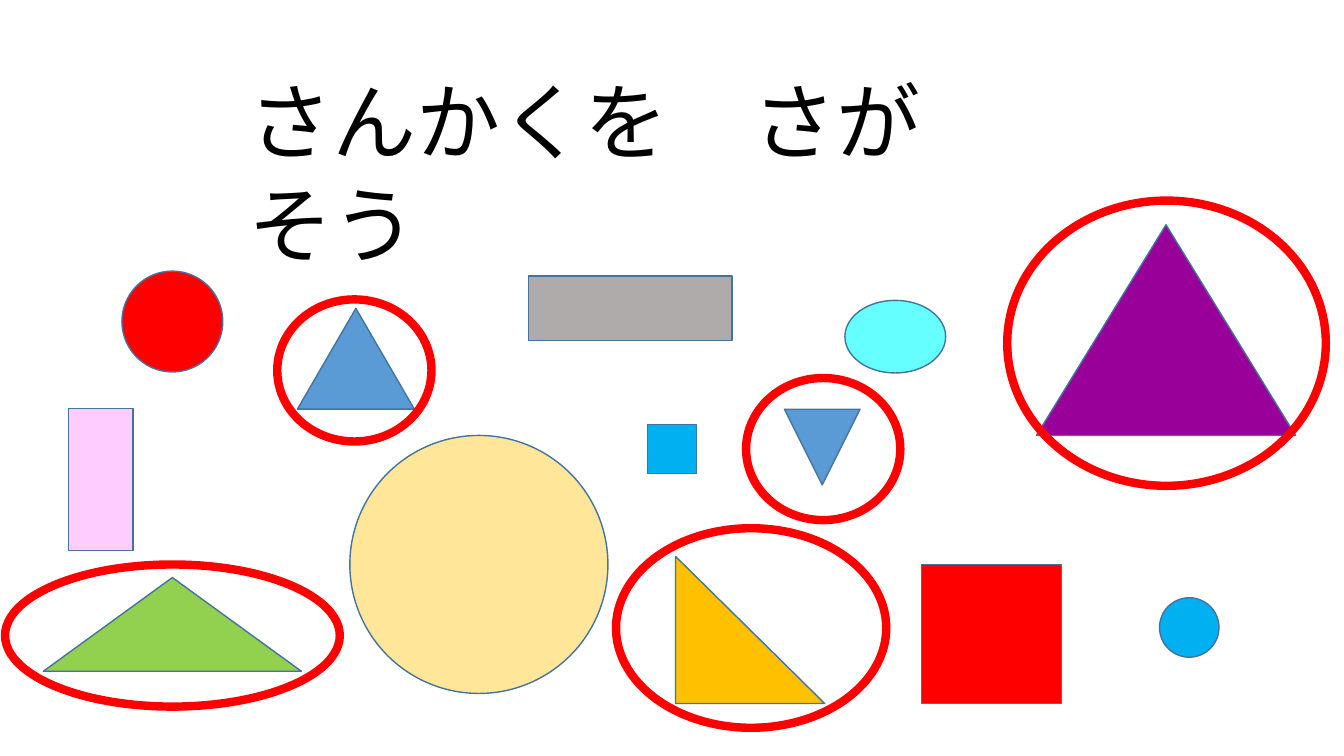
from pptx import Presentation
from pptx.dml.color import RGBColor as RGB
from pptx.enum.shapes import MSO_SHAPE as Shape
from pptx.enum.text import MSO_ANCHOR as Anchor, MSO_AUTO_SIZE as AutoSize, PP_ALIGN as Align
from pptx.util import Inches, Pt
from lxml.etree import SubElement
from pptx.oxml.ns import qn

FONT = "Noto Sans CJK JP"
COLORS = {
    "text": "000000", "outline": "43739E", "red": "FF0000", "sky": "00B0F0",
    "cream": "FFE699", "aqua": "66FFFF", "blue": "5B9BD5", "purple": "990099",
    "green": "92D050", "gold": "FFC000", "gray": "AFABAB", "pink": "FFCCFF",
}

deck = Presentation()
deck.slide_width, deck.slide_height = Inches(13.33), Inches(7.5)
COL = ROW = deck.slide_height / 75
slide = deck.slides.add_slide(deck.slide_layouts[5])


def place(col, row, cols, rows):
    return [round(n * unit) for n, unit in zip((col, row, cols, rows), (COL, ROW, COL, ROW))]


def add_figure(kind, box, line, weight, fill=None):
    figure = slide.shapes.add_shape(kind, *place(*box))
    figure.shadow.inherit = False
    figure.line.color.rgb = RGB.from_string(COLORS[line])
    figure.line.width = Pt(weight)
    if fill:
        figure.fill.solid()
        figure.fill.fore_color.rgb = RGB.from_string(COLORS[fill])
    else:
        figure.fill.background()


heading = slide.shapes.title
heading.left, heading.top, heading.width, heading.height = place(23.6, 6.3, 72.4, 11.1)
frame = heading.text_frame
frame.word_wrap = True
frame.auto_size = AutoSize.NONE
frame.vertical_anchor = Anchor.TOP
line = frame.paragraphs[0]
line.alignment = Align.LEFT
line.line_spacing = Pt(73)
question = line.add_run()
question.text = "さんかくを　さがそう"
question.font.size = Pt(60)
question.font.color.rgb = RGB.from_string(COLORS["text"])
question.font.name = FONT
SubElement(question.font._element, qn("a:ea"), typeface=FONT)

figures = [
    (Shape.OVAL, (12.1, 26.9, 10, 10), "red"),
    (Shape.OVAL, (115, 59.3, 5.9, 5.9), "sky"),
    (Shape.OVAL, (34.7, 43.2, 25.6, 25.6), "cream"),
    (Shape.OVAL, (83.8, 29.8, 10, 7.2), "aqua"),
    (Shape.ISOSCELES_TRIANGLE, (29.5, 30.6, 11.6, 10), "blue"),
    (Shape.ISOSCELES_TRIANGLE, (102.8, 22.3, 25.7, 20.9), "purple"),
    (Shape.ISOSCELES_TRIANGLE, (4.3, 57.3, 25.6, 9.3), "green"),
    (Shape.RIGHT_TRIANGLE, (67, 55.2, 14.8, 14.6), "gold"),
    (Shape.FLOWCHART_MERGE, (77.8, 40.6, 7.5, 7.5), "blue"),
    (Shape.RECTANGLE, (91.4, 56, 13.9, 13.8), "red"),
    (Shape.RECTANGLE, (52.4, 27.4, 20.2, 6.4), "gray"),
    (Shape.RECTANGLE, (6.8, 40.5, 6.4, 14.1), "pink"),
    (Shape.RECTANGLE, (64.2, 42.1, 4.9, 4.9), "sky"),
]
for kind, box, fill in figures:
    add_figure(kind, box, "outline", 1, fill)

answer_rings = [
    (27.5, 29.7, 15.3, 14.1),
    (74, 37.5, 15.3, 14.1),
    (0.5, 56, 33.2, 14.1),
    (61.1, 52.4, 26.8, 19.8),
    (99.9, 19.9, 31.6, 28.3),
]
for box in answer_rings:
    add_figure(Shape.OVAL, box, "red", 6)

deck.save("out.pptx")
